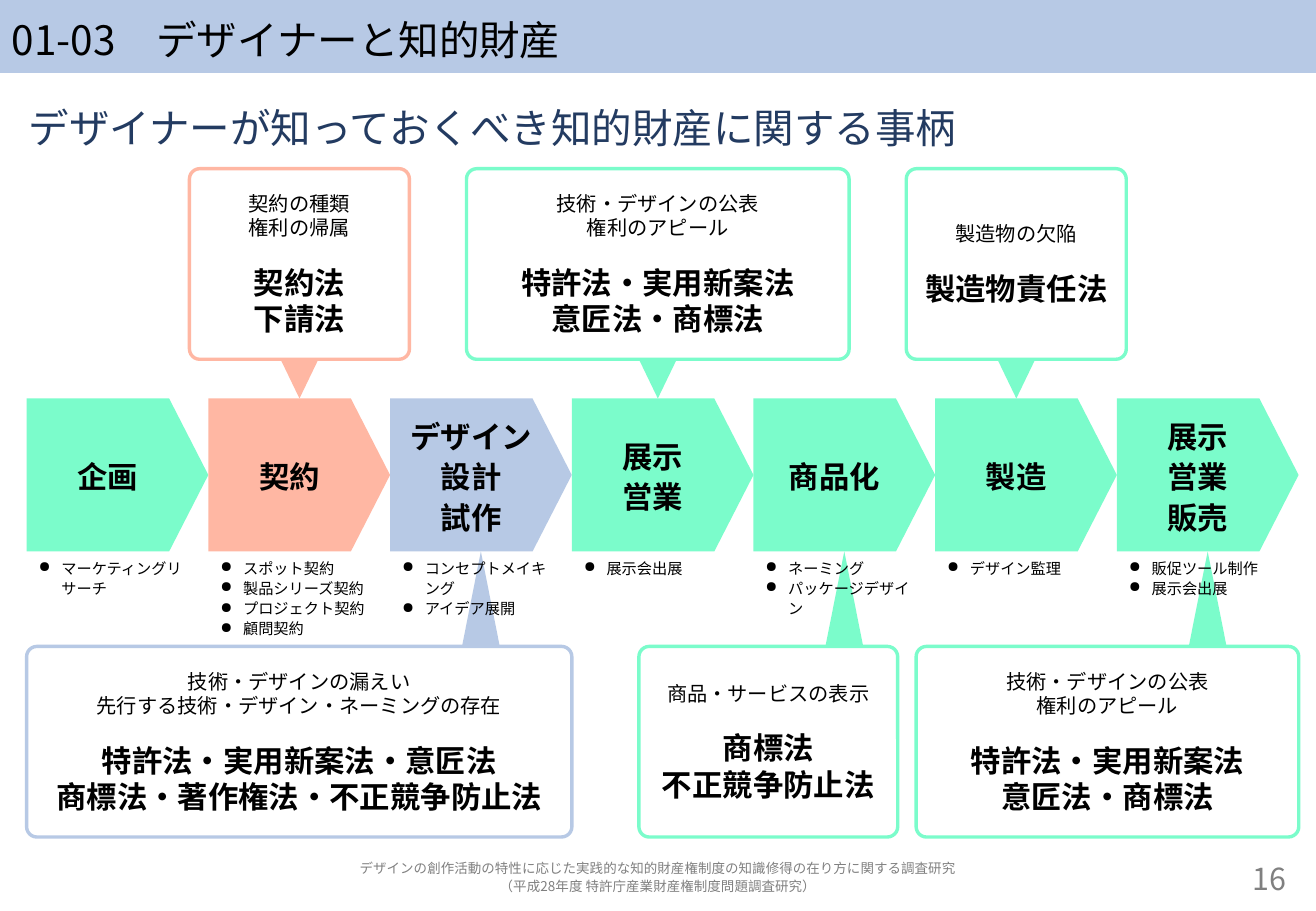
from dataclasses import dataclass

from lxml import etree
from pptx import Presentation
from pptx.dml.color import RGBColor
from pptx.enum import shapes, text
from pptx.oxml import ns
from pptx.util import Pt

FONT = "Noto Sans CJK JP"
COLORS = {
    "mint": "7BFCCB", "coral": "FFB7A3", "blue": "B7C9E5",
    "navy": "233B61", "black": "000000", "grey": "808080",
}
SLIDE_W, SLIDE_H = 780, 540
STAGE_X, STAGE_Y, STAGE_W, STAGE_H = 15.8, 236.2, 107.7, 90.7
BOX_H, UPPER_Y, LOWER_Y = 113, 100, 383.2
POINTER_W = 22.4
CORNER = 6.1
LAW_GAP = 14.4

MSO = shapes.MSO_SHAPE
ALIGN = text.PP_ALIGN
MIDDLE = text.MSO_ANCHOR.MIDDLE


@dataclass
class Stage:
    name: list[str]
    tasks: list[str]
    color: str = "mint"


@dataclass
class LawBox:
    x: float
    w: float
    issues: list[str]
    laws: list[str]
    color: str = "mint"
    stage: int | None = None  # set for boxes below the stages


STAGES = [
    Stage(["企画"], ["マーケティングリサーチ"]),
    Stage(["契約"], ["スポット契約", "製品シリーズ契約", "プロジェクト契約", "顧問契約"], "coral"),
    Stage(["デザイン", "設計", "試作"], ["コンセプトメイキング", "アイデア展開"], "blue"),
    Stage(["展示", "営業"], ["展示会出展"]),
    Stage(["商品化"], ["ネーミング", "パッケージデザイン"]),
    Stage(["製造"], ["デザイン監理"]),
    Stage(["展示", "営業", "販売"], ["販促ツール制作", "展示会出展"]),
]
PUBLICITY = ["技術・デザインの公表", "権利のアピール"]
IP_LAWS = ["特許法・実用新案法", "意匠法・商標法"]
BOXES = [
    LawBox(112.3, 130.4, ["契約の種類", "権利の帰属"], ["契約法", "下請法"], "coral"),
    LawBox(276.5, 226.8, PUBLICITY, IP_LAWS),
    LawBox(537.2, 130.4, ["製造物の欠陥"], ["製造物責任法"]),
    LawBox(15.8, 323.2, ["技術・デザインの漏えい", "先行する技術・デザイン・ネーミングの存在"],
           ["特許法・実用新案法・意匠法", "商標法・著作権法・不正競争防止法"], "blue", 2),
    LawBox(378.7, 153.4, ["商品・サービスの表示"], ["商標法", "不正競争防止法"], stage=4),
    LawBox(543, 226.8, PUBLICITY, IP_LAWS, stage=6),
]


def rgb(color: str) -> RGBColor:
    return RGBColor.from_string(COLORS[color])


def write(sp, lines: list[str], size: float, color: str = "black", bold: bool = False, **layout) -> list:
    """Append one paragraph per line; layout holds paragraph attributes."""
    tf = sp.text_frame
    tf.word_wrap = True
    paragraphs = []
    for line in lines:
        p = tf.add_paragraph() if tf.paragraphs[0].runs else tf.paragraphs[0]
        for key, value in layout.items():
            setattr(p, key, value)
        r = p.add_run()
        r.text = line
        for key, value in {"size": Pt(size), "bold": bold, "name": FONT}.items():
            setattr(r.font, key, value)
        r.font.color.rgb = rgb(color)
        ea = etree.SubElement(r.font._element, ns.qn("a:ea"))
        ea.set("typeface", FONT)
        paragraphs.append(p)
    return paragraphs


def add_bullet(p) -> None:
    pPr = p._p.get_or_add_pPr()
    pPr.set("marL", str(Pt(13.5)))
    pPr.set("indent", str(Pt(-13.5)))
    etree.SubElement(pPr, ns.qn("a:buChar")).set("char", "●")


def add_shape(slide, kind, x: float, y: float, w: float, h: float, fill: str | None = None):
    sp = slide.shapes.add_shape(kind, Pt(x), Pt(y), Pt(w), Pt(h))
    sp.shadow.inherit = False
    sp.line.fill.background()
    if fill:
        sp.fill.solid()
        sp.fill.fore_color.rgb = rgb(fill)
    else:
        sp.fill.background()
    sp.text_frame.vertical_anchor = MIDDLE
    return sp


def add_text(slide, x: float, y: float, w: float, h: float, anchor=MIDDLE):
    sp = slide.shapes.add_textbox(Pt(x), Pt(y), Pt(w), Pt(h))
    sp.text_frame.vertical_anchor = anchor
    return sp


def add_pointer(slide, box: LawBox) -> None:
    """Draw the triangle that joins a law box to its stage."""
    if box.stage is None:
        center, top, bottom = box.x + box.w / 2, UPPER_Y + BOX_H, STAGE_Y
    else:
        center = STAGE_X + (box.stage + 0.5) * STAGE_W
        top, bottom = STAGE_Y + STAGE_H, LOWER_Y
    sp = add_shape(slide, MSO.ISOSCELES_TRIANGLE, center - POINTER_W / 2, top,
                   POINTER_W, bottom - top, box.color)
    sp.rotation = 180 if box.stage is None else 0


def add_law_box(slide, box: LawBox) -> None:
    y = UPPER_Y if box.stage is None else LOWER_Y
    sp = add_shape(slide, MSO.ROUNDED_RECTANGLE, box.x, y, box.w, BOX_H)
    sp.adjustments[0] = CORNER / BOX_H
    sp.line.color.rgb = rgb(box.color)
    sp.line.width = Pt(2)
    write(sp, box.issues, 12, alignment=ALIGN.CENTER)
    laws = write(sp, box.laws, 18, bold=True, alignment=ALIGN.CENTER)
    laws[0].space_before = Pt(LAW_GAP)


def add_stage(slide, index: int, stage: Stage) -> None:
    x = STAGE_X + index * STAGE_W
    sp = add_shape(slide, MSO.PENTAGON, x, STAGE_Y, STAGE_W, STAGE_H, stage.color)
    sp.adjustments[0] = 0.256
    write(sp, stage.name, 18, bold=True, alignment=ALIGN.CENTER, line_spacing=1.1)
    tasks = add_text(slide, x, STAGE_Y + STAGE_H, STAGE_W, LOWER_Y - STAGE_Y - STAGE_H,
                     text.MSO_ANCHOR.TOP)
    for p in write(tasks, stage.tasks, 9, alignment=ALIGN.LEFT, line_spacing=1.1):
        add_bullet(p)


def main() -> None:
    prs = Presentation()
    prs.slide_width, prs.slide_height = Pt(SLIDE_W), Pt(SLIDE_H)
    slide = prs.slides.add_slide(prs.slide_layouts[6])

    for box in BOXES:
        add_pointer(slide, box)

    title = add_shape(slide, MSO.RECTANGLE, 0, 0, SLIDE_W, 43.2, "blue")
    write(title, ["01-03　デザイナーと知的財産"], 24, alignment=ALIGN.LEFT, line_spacing=1.1)
    heading = add_text(slide, 10, 54.7, 760, 33.8, text.MSO_ANCHOR.TOP)
    write(heading, ["デザイナーが知っておくべき知的財産に関する事柄"], 24, "navy", line_spacing=1.1)

    for index, stage in enumerate(STAGES):
        add_stage(slide, index, stage)
    for box in BOXES:
        add_law_box(slide, box)

    source = add_text(slide, 10, 508.3, 760, 22.3)
    write(source, ["デザインの創作活動の特性に応じた実践的な知的財産権制度の知識修得の在り方に関する調査研究",
                   "（平成28年度 特許庁産業財産権制度問題調査研究）"],
          8, "grey", alignment=ALIGN.CENTER, line_spacing=1.1)
    number = add_text(slide, 673.2, 508.3, 96.5, 22.3)
    write(number, ["16"], 18, "grey", alignment=ALIGN.RIGHT, line_spacing=1.1)

    prs.save("out.pptx")


if __name__ == "__main__":
    main()
